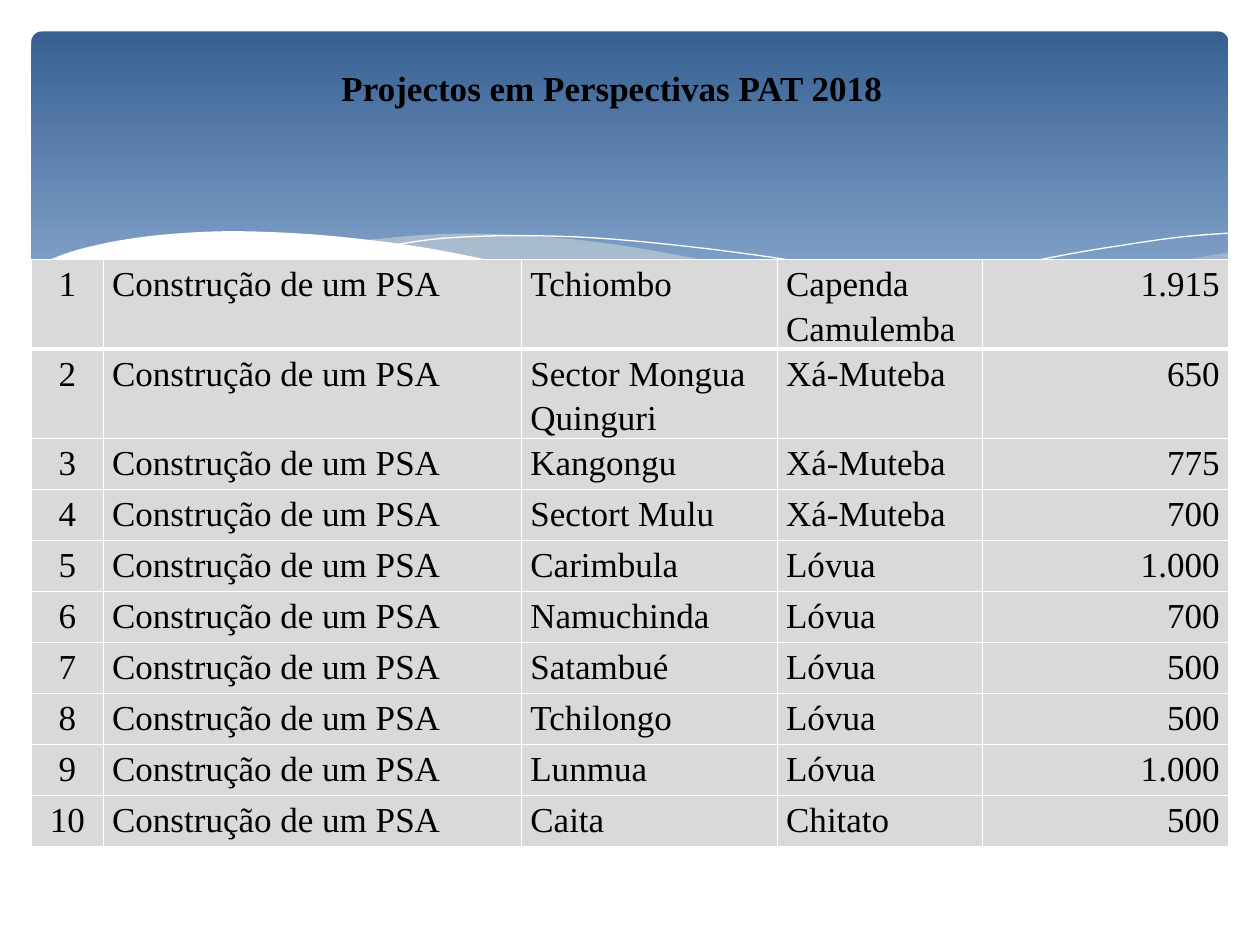
from lxml import etree
from pptx import Presentation
from pptx.dml.color import RGBColor
from pptx.enum.text import MSO_ANCHOR, PP_ALIGN
from pptx.enum.shapes import MSO_SHAPE
from pptx.oxml.ns import qn
from pptx.util import Inches, Pt

LEFT, CENTER, RIGHT = PP_ALIGN.LEFT, PP_ALIGN.CENTER, PP_ALIGN.RIGHT
TOP, MIDDLE = MSO_ANCHOR.TOP, MSO_ANCHOR.MIDDLE
ROUNDED = MSO_SHAPE.ROUNDED_RECTANGLE
WHITE, BLACK, GREY, CREAM = "FFFFFF", "000000", "D9D9D9", "EEECE1"
WIDTH, HEIGHT = 10, 7.5
MARGIN = WIDTH / 40
FONT = "Times New Roman"

COLUMNS = [0.57, 3.32, 2.03, 1.63, 1.95]
ALIGNMENTS = [CENTER, LEFT, LEFT, LEFT, RIGHT]
WORK = "Construção de um PSA"
PROJECTS = [
    ("Tchiombo", "Capenda Camulemba", "1.915"),
    ("Sector Mongua\nQuinguri", "Xá-Muteba", "650"),
    ("Kangongu", "Xá-Muteba", "775"),
    ("Sectort Mulu", "Xá-Muteba", "700"),
    ("Carimbula", "Lóvua", "1.000"),
    ("Namuchinda", "Lóvua", "700"),
    ("Satambué", "Lóvua", "500"),
    ("Tchilongo", "Lóvua", "500"),
    ("Lunmua", "Lóvua", "1.000"),
    ("Caita", "Chitato", "500"),
]

RIGHT_WAVE = [
    [(9.76, 2), (9.21, 2.1), (8.61, 2.23), (7.79, 2.42), (7.06, 2.57), (6.61, 2.65)],
    [(6.61, 2.65), (7.05, 2.71), (7.57, 2.76), (8.03, 2.78), (8.54, 2.76),
     (9.05, 2.69), (9.42, 2.59), (9.76, 2.47)],
]
MIDDLE_WAVE = [
    [(8.93, 2.73), (8.07, 2.6), (7.06, 2.4), (6.29, 2.22), (5.41, 2.03),
     (4.65, 1.91), (3.99, 1.86), (3.44, 1.86), (2.86, 1.91)],
    [(2.86, 1.91), (3.62, 2.03), (4.49, 2.22), (5.3, 2.4), (6.01, 2.55),
     (6.8, 2.68), (7.48, 2.76), (8.07, 2.78), (8.57, 2.77), (8.93, 2.73)],
]
LONG_LINE = [[(3.09, 1.95), (3.53, 1.89), (4.16, 1.87), (4.89, 1.9), (5.82, 2),
              (6.65, 2.13), (7.6, 2.33), (8.31, 2.51), (9.07, 2.72)]]
RIGHT_LINE = [[(6.13, 2.57), (6.72, 2.41), (7.48, 2.23), (8.36, 2.04),
               (8.95, 1.94), (9.38, 1.88), (9.75, 1.85)]]
WHITE_WAVE = [
    [(9.77, 2.46), (9.3, 2.62), (8.75, 2.73), (8.09, 2.77), (7.44, 2.74),
     (6.68, 2.65), (5.79, 2.5), (5.03, 2.33), (4.18, 2.13), (3.4, 1.97),
     (2.71, 1.88), (2.11, 1.84), (1.61, 1.84), (1.06, 1.89), (0.59, 1.99), (0.23, 2.13)],
    [(0.23, 3.29), (9.77, 3.29)],
]


def rgb(value):
    return RGBColor.from_string(value)


def write(tf, text, align=LEFT, size=20, bold=False, color=BLACK, spacing=1.0):
    for i, line in enumerate(text.split("\n")):
        p = tf.paragraphs[0] if i == 0 else tf.add_paragraph()
        p.alignment, p.line_spacing = align, spacing
        p.space_before = Pt(0)
        r = p.add_run()
        r.text = line
        r.font.name, r.font.size, r.font.bold = FONT, Pt(size), bold
        r.font.color.rgb = rgb(color)


def smooth(points, steps=5):
    ends = [points[0]] + points + [points[-1]]
    curve = [points[0]]
    for a, b, c, d in zip(ends, ends[1:], ends[2:], ends[3:]):
        for t in (k / steps for k in range(1, steps + 1)):
            curve.append(tuple(
                (2 * q + (r - p) * t + (2 * p - 5 * q + 4 * r - s) * t ** 2
                 + (3 * q - p - 3 * r + s) * t ** 3) / 2
                for p, q, r, s in zip(a, b, c, d)))
    return curve


def add_wave(s, edges, fill=None, alpha=100, line=None):
    points = [(Inches(x), Inches(y)) for edge in edges for x, y in smooth(edge)]
    builder = s.shapes.build_freeform(*points[0])
    builder.add_line_segments(points[1:], close=fill is not None)
    sp = builder.convert_to_shape()
    sp.shadow.inherit = False
    if fill:
        sp.fill.solid()
        sp.fill.fore_color.rgb = rgb(fill)
        color = sp.fill._xPr.find(qn("a:solidFill"))[0]
        etree.SubElement(color, qn("a:alpha"), val=str(alpha * 1000))
    else:
        sp.fill.background()
    if line:
        sp.line.color.rgb = rgb(line)
        sp.line.width = Pt(0)
    else:
        sp.line.fill.background()


def add_banner(s, x, y, w, h):
    sp = s.shapes.add_shape(ROUNDED, Inches(x), Inches(y), Inches(w), Inches(h))
    sp.adjustments[0] = 0.03
    sp.shadow.inherit = False
    sp.line.fill.background()
    sp.fill.gradient()
    sp.fill.gradient_angle = 270
    for stop, color, position in zip(sp.fill.gradient_stops, ("376092", "95B3D7"), (0, 0.9)):
        stop.color.rgb, stop.position = rgb(color), position
    add_wave(s, RIGHT_WAVE, fill=CREAM, alpha=29)
    add_wave(s, MIDDLE_WAVE, fill=CREAM, alpha=40)
    add_wave(s, LONG_LINE, line=WHITE)
    add_wave(s, RIGHT_LINE, line=WHITE)
    add_wave(s, WHITE_WAVE, fill=WHITE)


def add_title(s, x, y, w, h):
    title = s.shapes.title
    title.left, title.top, title.width, title.height = map(Inches, (x, y, w, h))
    tf = title.text_frame
    tf.word_wrap = False
    tf.vertical_anchor = MIDDLE
    write(tf, "Projectos em Perspectivas PAT 2018", bold=True)
    title.element.getparent().append(title.element)


def set_borders(cell, **widths):
    tcPr = cell._tc.get_or_add_tcPr()
    for i, side in enumerate("LRTB"):
        ln = etree.Element(qn("a:ln" + side), w=str(Pt(widths.get(side, 1))))
        fill = etree.SubElement(ln, qn("a:solidFill"))
        etree.SubElement(fill, qn("a:srgbClr"), val=WHITE)
        tcPr.insert(i, ln)


def add_projects(s, x, y, w, h):
    frame = s.shapes.add_table(len(PROJECTS), len(COLUMNS), *map(Inches, (x, y, w, h)))
    table = frame.table
    table.first_row = table.horz_banding = False
    for column, share in zip(table.columns, COLUMNS):
        column.width = Inches(w * share / sum(COLUMNS))
    tall = 0.71
    short = (h - 2 * tall) / (len(PROJECTS) - 2)
    for i, project in enumerate(PROJECTS):
        table.rows[i].height = Inches(tall if i < 2 else short)
        for j, text in enumerate((str(i + 1), WORK) + project):
            cell = table.cell(i, j)
            cell.margin_left = cell.margin_right = Inches(0.07)
            cell.margin_top = cell.margin_bottom = 0
            cell.vertical_anchor = TOP
            cell.fill.solid()
            cell.fill.fore_color.rgb = rgb(GREY)
            set_borders(cell, T=3 if i == 1 else 1, B=3 if i == 0 else 1)
            write(cell.text_frame, text, align=ALIGNMENTS[j], spacing=1.15)


def main():
    prs = Presentation()
    prs.slide_width, prs.slide_height = Inches(WIDTH), Inches(HEIGHT)
    s = prs.slides.add_slide(prs.slide_layouts[5])
    inner = WIDTH - 2 * MARGIN
    add_banner(s, MARGIN, MARGIN, inner, 0.36 * HEIGHT)
    add_projects(s, MARGIN, 2.06, inner, 4.66)
    add_title(s, 2.61, 0.48, 4.55, 0.43)
    prs.save("out.pptx")


if __name__ == "__main__":
    main()
